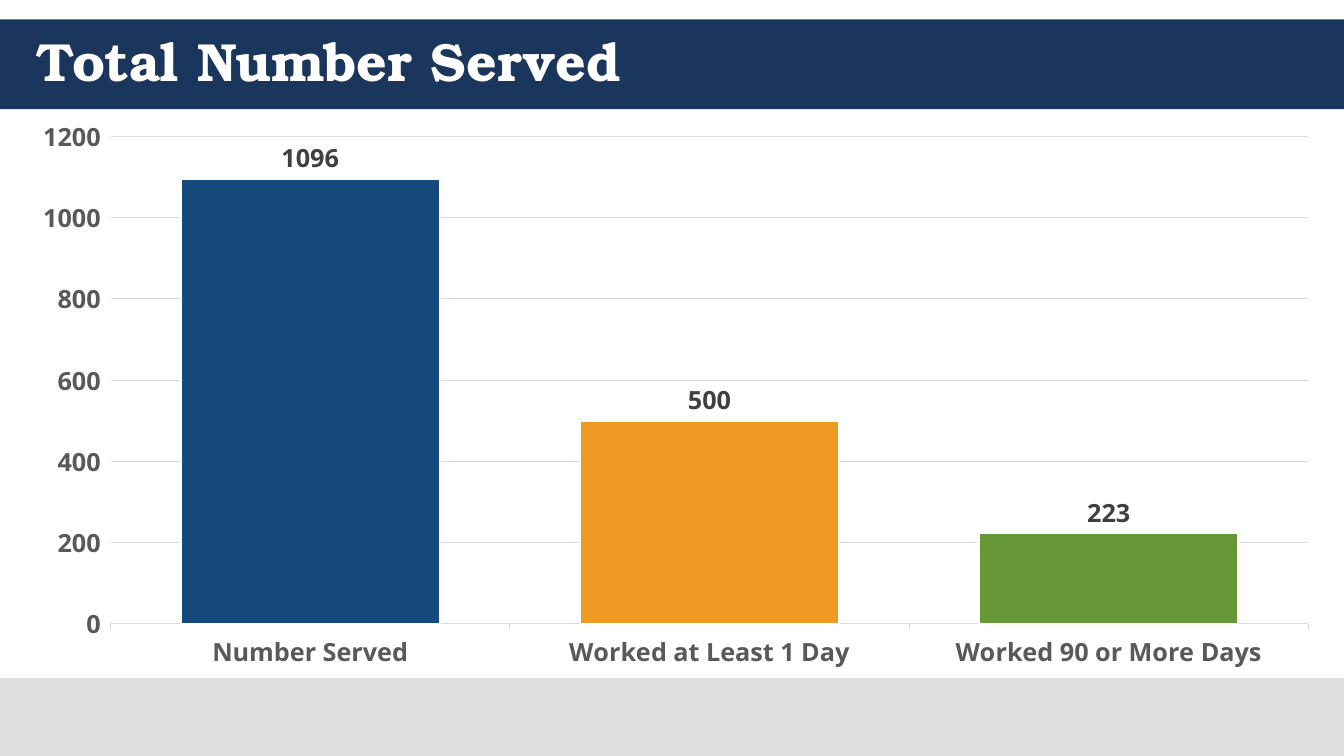
from lxml.etree import SubElement
from pptx import Presentation
from pptx.chart.data import CategoryChartData
from pptx.dml.color import RGBColor
from pptx.enum.chart import XL_CHART_TYPE, XL_LABEL_POSITION, XL_TICK_MARK
from pptx.enum.shapes import MSO_SHAPE
from pptx.enum.text import MSO_ANCHOR
from pptx.oxml import parse_xml
from pptx.oxml.ns import nsdecls, qn
from pptx.util import Cm, Pt

WIDTH, HEIGHT = 33.87, 19.05
SERVED = {
    "Number Served": (1096, "174A7C"),
    "Worked at Least 1 Day": (500, "ED9924"),
    "Worked 90 or More Days": (223, "659737"),
}
PLOT_AREA = {"x": 0.06, "y": 0.028, "w": 0.93, "h": 0.873}


def set_fill(target, color):
    target.fill.solid()
    target.fill.fore_color.rgb = RGBColor.from_string(color)


def set_line(line, color, width):
    line.color.rgb = RGBColor.from_string(color)
    line.width = Pt(width)


def set_font(font, name, size, color, bold=True):
    font.name = name
    font.size = Pt(size)
    font.bold = bold
    font.color.rgb = RGBColor.from_string(color)


def add_band(slide, left, top, width, height, color):
    band = slide.shapes.add_shape(
        MSO_SHAPE.RECTANGLE, Cm(left), Cm(top), Cm(width), Cm(height))
    band.shadow.inherit = False
    set_fill(band, color)
    band.line.fill.background()


def add_header(slide, left, top, width, height, title):
    add_band(slide, left, top, width, height, "1B365D")
    box = slide.shapes.add_textbox(
        Cm(left + 0.56), Cm(top), Cm(width - 1.12), Cm(height))
    frame = box.text_frame
    frame.word_wrap = True
    frame.vertical_anchor = MSO_ANCHOR.MIDDLE
    frame.margin_left = frame.margin_right = Cm(0.36)
    frame.margin_top = frame.margin_bottom = Cm(0.18)
    paragraph = frame.paragraphs[0]
    paragraph.line_spacing = 0.9
    run = paragraph.add_run()
    run.text = title
    set_font(run.font, "TeX Gyre Bonum", 38.3, "FFFFFF")


def set_plot_area(chart, fractions):
    """Fix the inner plot area as fractions of the chart's frame."""
    plot_area = chart.element.find(".//" + qn("c:plotArea"))
    for old_layout in plot_area.findall(qn("c:layout")):
        plot_area.remove(old_layout)
    layout = parse_xml(f"<c:layout {nsdecls('c')}><c:manualLayout/></c:layout>")
    settings = {"layoutTarget": "inner", "xMode": "edge", "yMode": "edge", **fractions}
    for tag, value in settings.items():
        SubElement(layout[0], qn(f"c:{tag}")).set("val", str(value))
    plot_area.insert(0, layout)


def style_axes(chart):
    for axis in (chart.category_axis, chart.value_axis):
        set_font(axis.tick_labels.font, "Open Sans", 18, "595959")
        axis.major_tick_mark = XL_TICK_MARK.OUTSIDE
        axis.minor_tick_mark = XL_TICK_MARK.NONE
    set_line(chart.category_axis.format.line, "D9D9D9", 0.75)
    value_axis = chart.value_axis
    value_axis.format.line.fill.background()
    value_axis.minimum_scale = 0
    value_axis.maximum_scale = 1200
    value_axis.major_unit = 200
    value_axis.has_major_gridlines = True
    set_line(value_axis.major_gridlines.format.line, "D9D9D9", 0.75)


def add_served_chart(slide, left, top, width, height):
    data = CategoryChartData()
    data.categories = list(SERVED)
    data.add_series("Series 1", [value for value, color in SERVED.values()])
    chart = slide.shapes.add_chart(
        XL_CHART_TYPE.COLUMN_CLUSTERED,
        Cm(left), Cm(top), Cm(width), Cm(height), data).chart
    chart.has_legend = False
    chart.has_title = False
    set_font(chart.font, "Open Sans", 10, "000000", bold=False)
    set_plot_area(chart, PLOT_AREA)
    style_axes(chart)

    plot = chart.plots[0]
    plot.gap_width = 54
    plot.vary_by_categories = False
    series = plot.series[0]
    set_fill(series.format, "2DCCD3")
    set_line(series.format.line, "FFFFFF", 1.5)
    for index, (value, color) in enumerate(SERVED.values()):
        point_format = series.points[index].format
        set_fill(point_format, color)
        set_line(point_format.line, "FFFFFF", 1.5)
    labels = series.data_labels
    labels.show_value = True
    labels.position = XL_LABEL_POSITION.OUTSIDE_END
    set_font(labels.font, "Open Sans", 18, "404040")


def main():
    presentation = Presentation()
    presentation.slide_width = Cm(WIDTH)
    presentation.slide_height = Cm(HEIGHT)
    slide = presentation.slides.add_slide(presentation.slide_layouts[6])
    set_fill(slide.background, "FFFFFF")
    add_band(slide, 0, 17.09, WIDTH, HEIGHT - 17.09, "E0E0E0")
    add_header(slide, 0, 0.49, WIDTH, 2.26, "Total Number Served")
    add_served_chart(slide, 0.84, 3, 32.46, 14.12)
    presentation.save("out.pptx")


if __name__ == "__main__":
    main()
